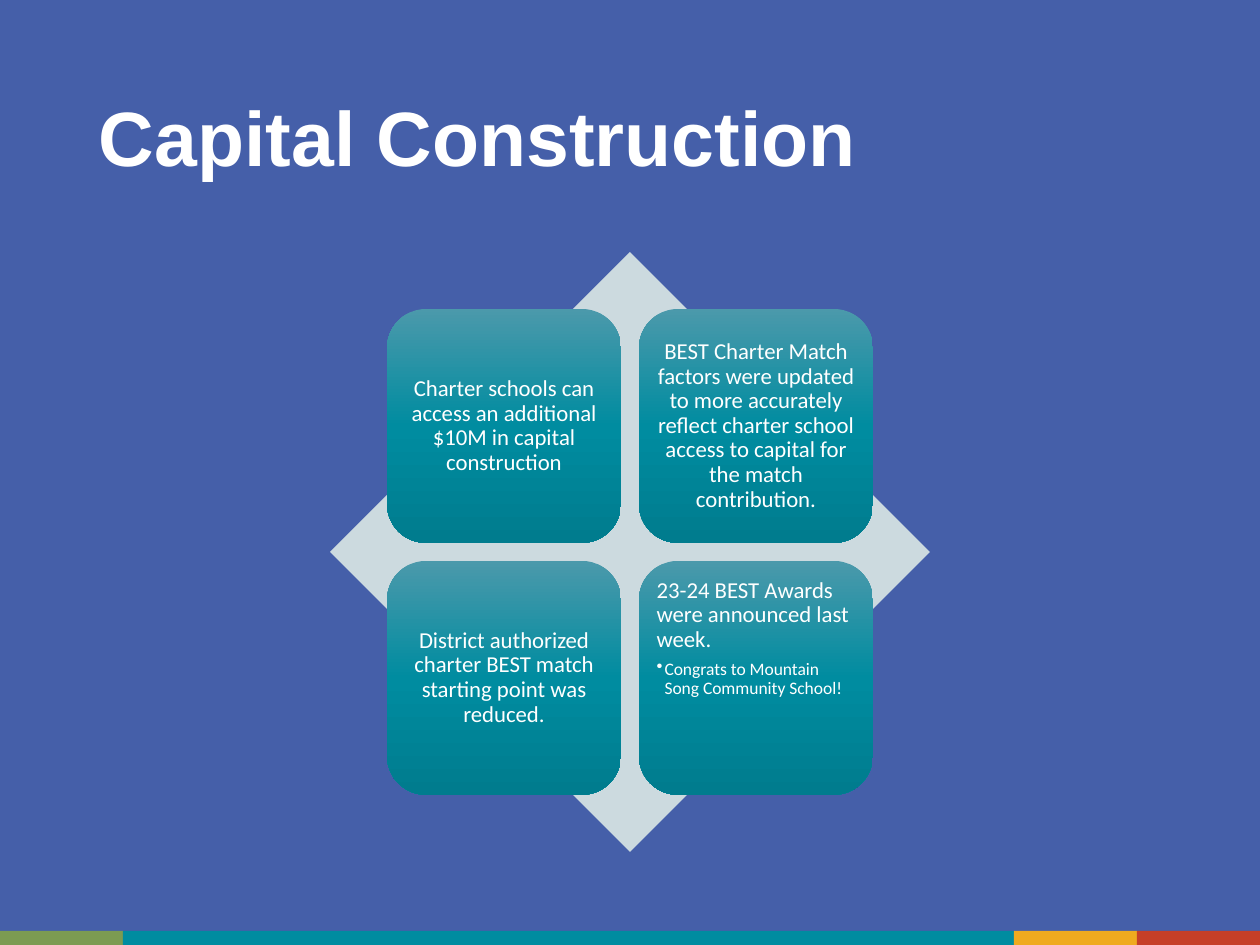
from pptx import Presentation
from pptx.dml.color import RGBColor as RGB
from pptx.enum.shapes import MSO_SHAPE as Kind
from pptx.enum.text import MSO_ANCHOR as Anchor, PP_ALIGN as Align
from pptx.oxml import parse_xml
from pptx.oxml.ns import nsdecls
from pptx.util import Pt

BLUE = RGB(0x45, 0x5F, 0xA9)
WHITE = RGB(0xFF, 0xFF, 0xFF)
PALE = RGB(0xCC, 0xDA, 0xDF)
GREEN = RGB(0x7C, 0x9B, 0x52)
TEAL = RGB(0x00, 0x8C, 0xA0)
GOLD = RGB(0xEF, 0xAA, 0x1F)
RED = RGB(0xC6, 0x3F, 0x28)
LIGHT = RGB(0x4B, 0x99, 0xAB)
DARK = RGB(0x00, 0x7C, 0x8E)

CARDS = [
    "Charter schools can access an additional $10M in capital construction",
    "BEST Charter Match factors were updated to more accurately reflect "
    "charter school access to capital for the match contribution.",
    "District authorized charter BEST match starting point was reduced.",
    "23-24 BEST Awards were announced last week.",
]
NOTE = "Congrats to Mountain Song Community School!"


def add_part(slide, kind, x, y, w, h, color=None):
    part = slide.shapes.add_shape(kind, Pt(x), Pt(y), Pt(w), Pt(h))
    part.shadow.inherit = False
    part.line.fill.background()
    if color is not None:
        part.fill.solid()
        part.fill.fore_color.rgb = color
    return part


def add_run(para, text, size, face, bold=False):
    para.line_spacing = 0.9
    run = para.add_run()
    run.text = text
    font = run.font
    font.size, font.name, font.bold = Pt(size), face, bold
    font.color.rgb = WHITE


def shade(part):
    part.fill.gradient()
    part.fill.gradient_angle = 270
    stops = part.fill.gradient_stops
    stops[0].color.rgb, stops[0].position = LIGHT, 0
    stops[1].color.rgb, stops[1].position = DARK, 1
    mid = parse_xml(
        f'<a:gs {nsdecls("a")} pos="50000"><a:srgbClr val="{TEAL}"/></a:gs>')
    part.fill._fill._gradFill.gsLst.insert(1, mid)


def add_note(frame, text):
    para = frame.add_paragraph()
    props = para._p.get_or_add_pPr()
    props.set("marL", str(Pt(4.5)))
    props.set("indent", str(-Pt(4.5)))
    props.append(parse_xml(f'<a:buChar {nsdecls("a")} char="•"/>'))
    para.level = 1
    para.alignment = Align.LEFT
    add_run(para, text, 10, "Calibri")


def add_card(slide, x, y, side, text, note=None):
    card = add_part(slide, Kind.ROUNDED_RECTANGLE, x, y, side, side)
    shade(card)
    frame = card.text_frame
    frame.word_wrap = True
    frame.margin_left = frame.margin_right = Pt(3.6)
    frame.margin_top = frame.margin_bottom = Pt(3.6)
    frame.vertical_anchor = Anchor.TOP if note else Anchor.MIDDLE
    para = frame.paragraphs[0]
    para.alignment = Align.LEFT if note else Align.CENTER
    add_run(para, text, 13, "Calibri")
    if note:
        para.space_after = Pt(4.5)
        add_note(frame, note)


def add_matrix(slide, x, y, side):
    add_part(slide, Kind.DIAMOND, x, y, side, side, PALE)
    card, pitch = 0.39 * side, 0.42 * side
    edge = (side - card - pitch) / 2
    for i, text in enumerate(CARDS):
        row, col = divmod(i, 2)
        note = NOTE if i == len(CARDS) - 1 else None
        add_card(slide, x + edge + col * pitch, y + edge + row * pitch,
                 card, text, note)


def add_title(slide, x, y, w, h):
    box = slide.shapes.add_textbox(Pt(x), Pt(y), Pt(w), Pt(h))
    frame = box.text_frame
    frame.word_wrap = True
    frame.vertical_anchor = Anchor.MIDDLE
    add_run(frame.paragraphs[0], "Capital Construction", 44, "Arial", True)


def add_strip(slide, x, y, w, h):
    end = 70.3
    widths = [end, w - 3 * end, end, end]
    for color, width in zip([GREEN, TEAL, GOLD, RED], widths):
        add_part(slide, Kind.RECTANGLE, x, y, width, h, color)
        x += width


def main():
    deck = Presentation()
    deck.slide_width, deck.slide_height = Pt(720), Pt(540)
    slide = deck.slides.add_slide(deck.slide_layouts[6])
    slide.background.fill.solid()
    slide.background.fill.fore_color.rgb = BLUE
    add_strip(slide, 0, 532, 720, 8)
    add_title(slide, 49.5, 28.75, 621, 104.4)
    add_matrix(slide, 188.6, 144, 342.8)
    deck.save("out.pptx")


if __name__ == "__main__":
    main()
